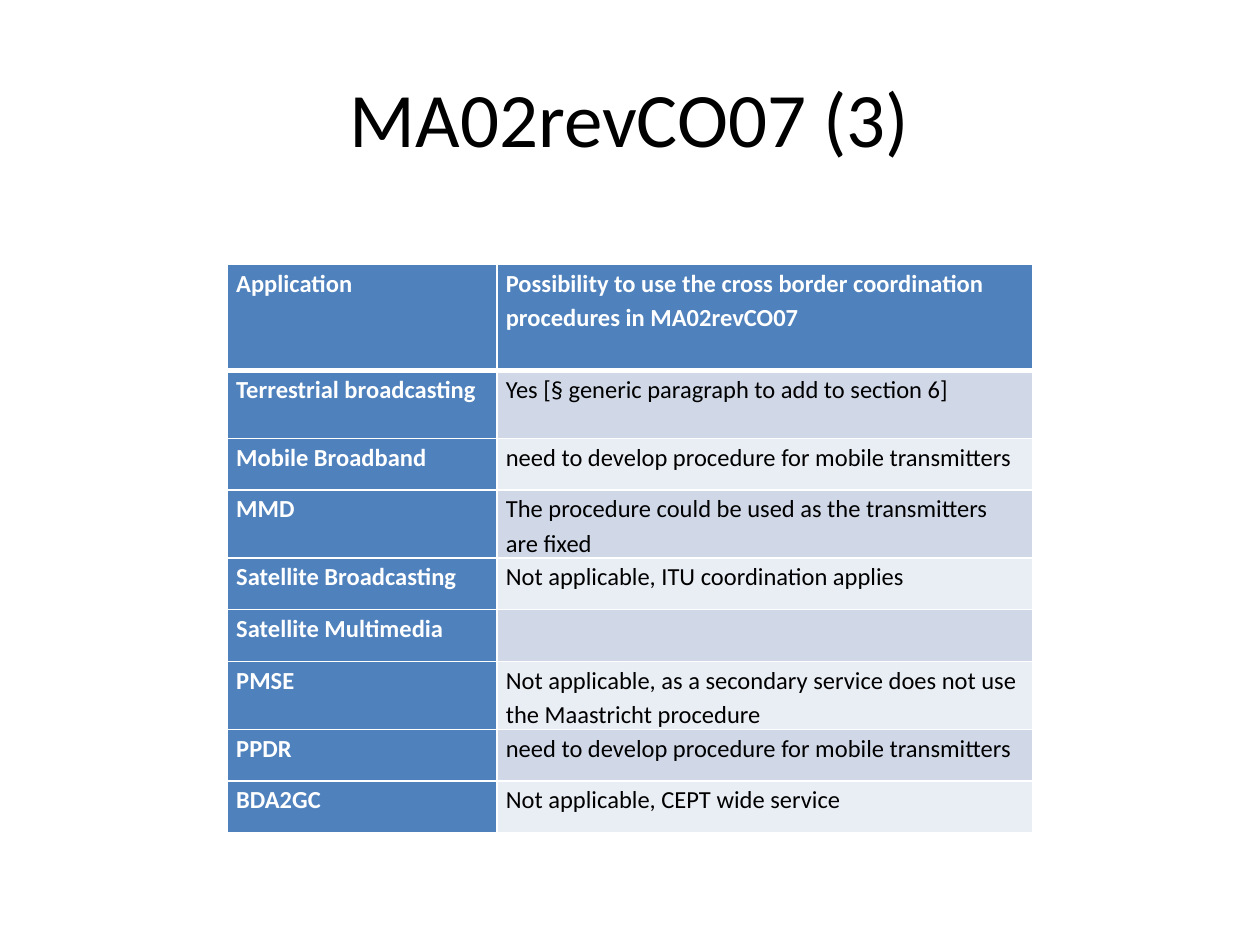
import dataclasses

import pptx
import pptx.dml.color
import pptx.enum.text
import pptx.oxml
import pptx.oxml.ns
import pptx.util

COLORS = {
    "black": "000000",
    "white": "FFFFFF",
    "header": "4F81BD",
    "band_dark": "D0D8E8",
    "band_light": "E9EDF4",
}
FONT = "Calibri"
WIDTH, HEIGHT = 10, 7.5
COLUMN_WIDTHS = (2.14, 4.25)
HEADER_HEIGHT, ROW_HEIGHT, TALL_HEIGHT = 0.84, 0.41, 0.54


@dataclasses.dataclass(frozen=True)
class Row:
    application: str
    possibility: str
    height: float = ROW_HEIGHT


ROWS = (
    Row("Application",
        "Possibility to use the cross border coordination procedures in MA02revCO07",
        HEADER_HEIGHT),
    Row("Terrestrial broadcasting", "Yes [§ generic paragraph to add to section 6]", TALL_HEIGHT),
    Row("Mobile Broadband", "need to develop procedure for mobile transmitters"),
    Row("MMD", "The procedure could be used as the transmitters are fixed", TALL_HEIGHT),
    Row("Satellite Broadcasting", "Not applicable, ITU coordination applies"),
    Row("Satellite Multimedia", ""),
    Row("PMSE",
        "Not applicable, as a secondary service does not use the Maastricht procedure",
        TALL_HEIGHT),
    Row("PPDR", "need to develop procedure for mobile transmitters"),
    Row("BDA2GC", "Not applicable, CEPT wide service"),
)


def rgb(name: str) -> pptx.dml.color.RGBColor:
    return pptx.dml.color.RGBColor.from_string(COLORS[name])


def write(tf, text: str, *, size: float, color: str, bold: bool = False,
          align=pptx.enum.text.PP_ALIGN.LEFT, spacing: float = 1.0) -> None:
    """Put one formatted paragraph in a text frame."""
    tf.word_wrap = True
    p = tf.paragraphs[0]
    p.alignment = align
    p.line_spacing = spacing
    p.font.size = pptx.util.Pt(size)
    if text:
        r = p.add_run()
        r.text = text
        r.font.name = FONT
        r.font.size = pptx.util.Pt(size)
        r.font.bold = bold
        r.font.color.rgb = rgb(color)


def add_borders(cell, bottom: float, top: float) -> None:
    """Draw white cell borders; widths are in points."""
    tc_pr = cell._tc.get_or_add_tcPr()
    for side, width in (("L", 1), ("R", 1), ("T", top), ("B", bottom)):
        tc_pr.append(pptx.oxml.parse_xml(
            f'<a:ln{side} {pptx.oxml.ns.nsdecls("a")} w="{pptx.util.Pt(width)}">'
            f'<a:solidFill><a:srgbClr val="{COLORS["white"]}"/></a:solidFill>'
            f'</a:ln{side}>'))


def fill_cell(cell, text: str, row: int, column: int) -> None:
    is_heading = row == 0 or column == 0
    add_borders(cell, bottom=3 if row == 0 else 1, top=3 if row == 1 else 1)
    band = "band_dark" if row % 2 else "band_light"
    cell.fill.solid()
    cell.fill.fore_color.rgb = rgb("header" if is_heading else band)
    cell.margin_left = cell.margin_right = pptx.util.Inches(0.07)
    cell.margin_top = cell.margin_bottom = 0
    write(cell.text_frame, text, size=14, bold=is_heading, spacing=1.15,
          color="white" if is_heading else "black")


def add_title(slide, text: str) -> None:
    sp = slide.shapes.add_textbox(
        *map(pptx.util.Inches, (0.05 * WIDTH, 0.04 * HEIGHT, 0.9 * WIDTH, HEIGHT / 6)))
    sp.text_frame.vertical_anchor = pptx.enum.text.MSO_ANCHOR.MIDDLE
    write(sp.text_frame, text, size=44, color="black",
          align=pptx.enum.text.PP_ALIGN.CENTER)


def add_procedure_table(slide, rows: tuple[Row, ...]) -> None:
    width = sum(COLUMN_WIDTHS)
    height = sum(row.height for row in rows)
    frame = slide.shapes.add_table(
        len(rows), len(COLUMN_WIDTHS),
        *map(pptx.util.Inches, ((WIDTH - width) / 2, 0.28 * HEIGHT, width, height)))
    table = frame.table
    for column, column_width in zip(table.columns, COLUMN_WIDTHS):
        column.width = pptx.util.Inches(column_width)
    for i, row in enumerate(rows):
        table.rows[i].height = pptx.util.Inches(row.height)
        for j, text in enumerate((row.application, row.possibility)):
            fill_cell(table.cell(i, j), text, i, j)


def main() -> None:
    prs = pptx.Presentation()
    prs.slide_width = pptx.util.Inches(WIDTH)
    prs.slide_height = pptx.util.Inches(HEIGHT)
    slide = prs.slides.add_slide(prs.slide_layouts[6])

    # Title above, application table below
    add_title(slide, "MA02revCO07 (3)")
    add_procedure_table(slide, ROWS)
    prs.save("out.pptx")


if __name__ == "__main__":
    main()
